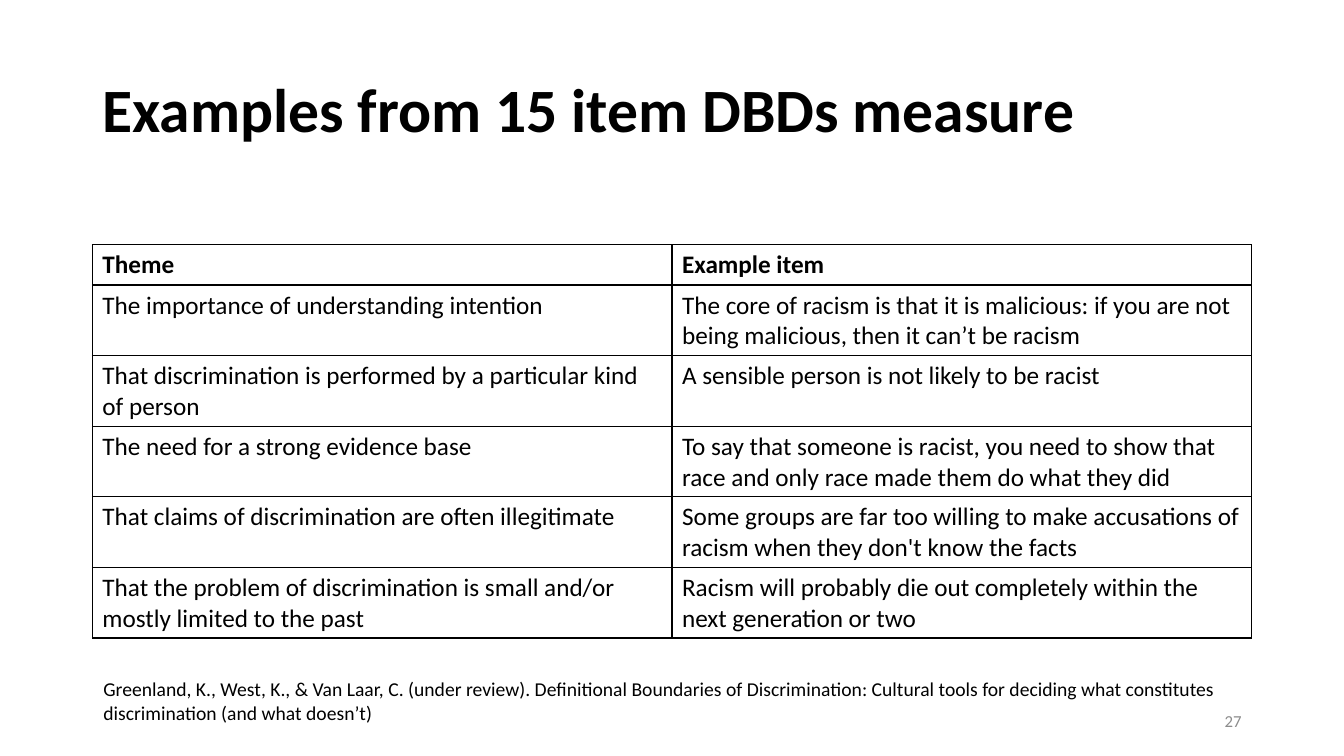
from lxml.etree import SubElement
from pptx import Presentation
from pptx.dml.color import RGBColor
from pptx.enum.text import MSO_ANCHOR as Anchor, PP_ALIGN as Align
from pptx.oxml.ns import qn
from pptx.util import Emu, Pt

EMU_PER_PX = 9525
FONT = "Calibri"
BLACK = "000000"
GREY = "8C8C8C"
HEADER_HEIGHT = 38
ROW_HEIGHT = 66
ROWS = [
    ("Theme", "Example item"),
    ("The importance of understanding intention",
     "The core of racism is that it is malicious: if you are not being malicious, then it can’t be racism"),
    ("That discrimination is performed by a particular kind of person",
     "A sensible person is not likely to be racist"),
    ("The need for a strong evidence base",
     "To say that someone is racist, you need to show that race and only race made them do what they did"),
    ("That claims of discrimination are often illegitimate",
     "Some groups are far too willing to make accusations of racism when they don't know the facts"),
    ("That the problem of discrimination is small and/or mostly limited to the past",
     "Racism will probably die out completely within the next generation or two"),
]
CITATION = (
    "Greenland, K., West, K., & Van Laar, C. (under review). Definitional Boundaries of Discrimination: "
    "Cultural tools for deciding what constitutes discrimination (and what doesn’t)"
)


def px(length):
    return Emu(length * EMU_PER_PX)


def color(value):
    return RGBColor.from_string(value)


def write_text(frame, text, size=18, bold=False, fill=BLACK, align=Align.LEFT,
               line_spacing=1.0, space_before=0):
    frame.word_wrap = True
    paragraph = frame.paragraphs[0]
    paragraph.alignment = align
    paragraph.line_spacing = line_spacing
    paragraph.space_before = Pt(space_before)
    run = paragraph.add_run()
    run.text = text
    run.font.name = FONT
    run.font.size = Pt(size)
    run.font.bold = bold
    run.font.color.rgb = color(fill)


def add_text(slide, text, left, top, width, height, anchor=Anchor.TOP, **text_format):
    shape = slide.shapes.add_textbox(px(left), px(top), px(width), px(height))
    shape.text_frame.vertical_anchor = anchor
    write_text(shape.text_frame, text, **text_format)


def set_borders(cell, line_color=BLACK, width=1):
    properties = cell._tc.get_or_add_tcPr()
    for index, side in enumerate(("lnL", "lnR", "lnT", "lnB")):
        line = SubElement(properties, qn(f"a:{side}"), w=str(Pt(width)))
        properties.remove(line)
        properties.insert(index, line)
        fill = SubElement(line, qn("a:solidFill"))
        SubElement(fill, qn("a:srgbClr"), val=line_color)


def add_theme_table(slide, rows, left, top, width):
    height = HEADER_HEIGHT + ROW_HEIGHT * (len(rows) - 1)
    columns = len(rows[0])
    table = slide.shapes.add_table(
        len(rows), columns, px(left), px(top), px(width), px(height)).table
    table.horz_banding = False
    for column in table.columns:
        column.width = px(width // columns)
    for row_index, texts in enumerate(rows):
        is_header = row_index == 0
        table.rows[row_index].height = px(HEADER_HEIGHT if is_header else ROW_HEIGHT)
        for column_index, text in enumerate(texts):
            cell = table.cell(row_index, column_index)
            cell.fill.background()
            set_borders(cell)
            write_text(cell.text_frame, text, bold=is_header)


def main():
    presentation = Presentation()
    presentation.slide_width = px(1280)
    presentation.slide_height = px(720)
    slide = presentation.slides.add_slide(presentation.slide_layouts[6])
    add_text(slide, "Examples from 15 item DBDs measure", 88, 38, 1104, 139,
             anchor=Anchor.MIDDLE, size=44, bold=True, line_spacing=0.9)
    add_theme_table(slide, ROWS, 88, 233, 1104)
    add_text(slide, "27", 904, 667, 288, 38, anchor=Anchor.MIDDLE,
             size=12, fill=GREY, align=Align.RIGHT)
    add_text(slide, CITATION, 89, 640, 1102, 55, size=14, space_before=12)
    presentation.save("out.pptx")


if __name__ == "__main__":
    main()
